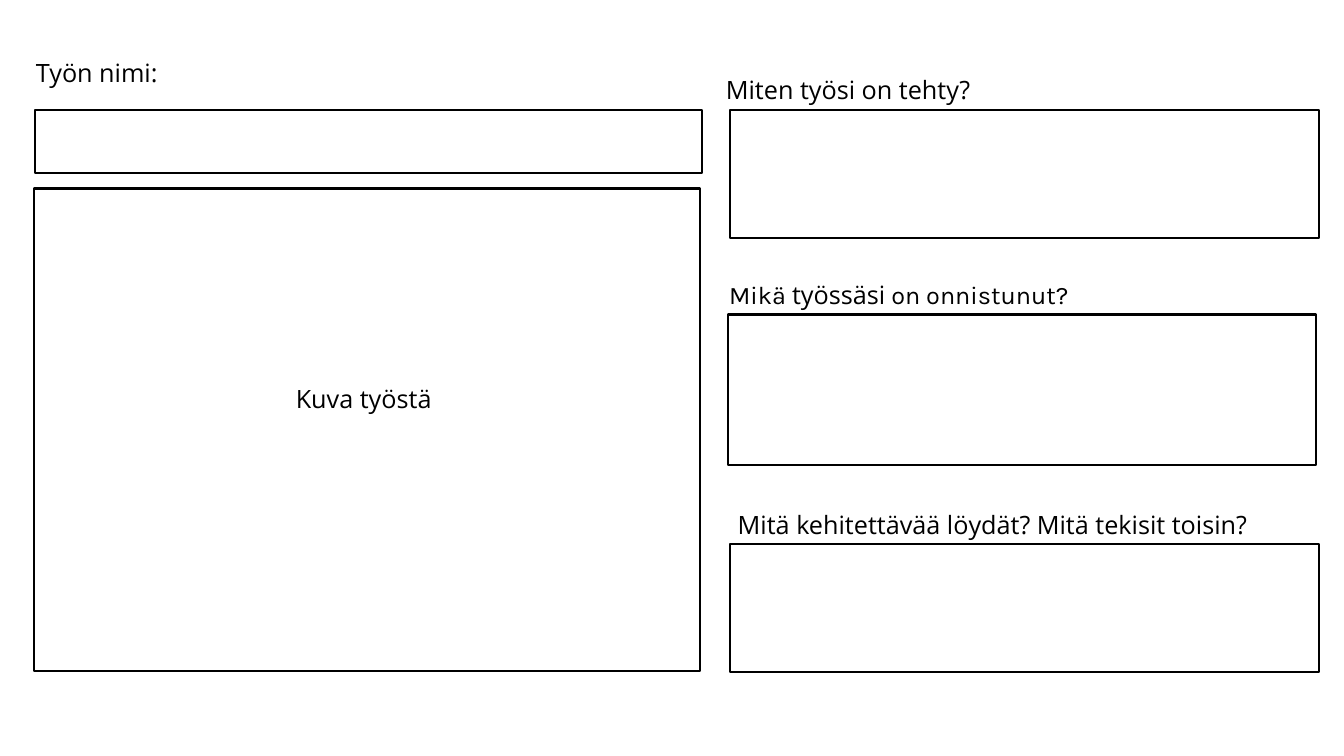
from pptx import Presentation
from pptx.dml.color import RGBColor
from pptx.enum.shapes import MSO_SHAPE as Preset
from pptx.enum.text import MSO_ANCHOR as Anchor, MSO_AUTO_SIZE as AutoSize, PP_ALIGN as Align
from pptx.util import Inches, Pt

BLACK = RGBColor(0x00, 0x00, 0x00)
WHITE = RGBColor(0xFF, 0xFF, 0xFF)
MAIN_FONT = "Open Sans"
ACCENT_FONT = "Karla"
LABEL_HEIGHT = 0.4

ANSWER_FRAMES = [
    (0.34, 1.87, 6.6, 4.79),
    (0.35, 1.09, 6.61, 0.63),
    (7.24, 1.09, 5.84, 1.27),
    (7.22, 3.12, 5.83, 1.49),
    (7.24, 5.4, 5.84, 1.27),
]

LABELS = [
    (2.6, 3.75, 2.08, [("Kuva työstä ", MAIN_FONT)]),
    (6.19, 0.69, 4.51, [("Miten työsi on tehty? ", MAIN_FONT)]),
    (6.66, 2.72, 4.51, [("Mikä ", ACCENT_FONT), ("työssäsi", MAIN_FONT),
                        (" on onnistunut?", ACCENT_FONT)]),
    (6.66, 5, 6.37, [("Mitä kehitettävää löydät? Mitä tekisit toisin?", MAIN_FONT)]),
]


def add_frame(slide, left, top, width, height):
    """Add an empty outlined box for an answer or a photo."""
    frame = slide.shapes.add_shape(
        Preset.RECTANGLE, Inches(left), Inches(top), Inches(width), Inches(height))
    frame.shadow.inherit = False
    frame.fill.solid()
    frame.fill.fore_color.rgb = WHITE
    frame.line.color.rgb = BLACK
    frame.line.width = Pt(1.5)


def write_label(box, spans):
    """Write one centred line of text spans, each in its own font."""
    frame = box.text_frame
    frame.word_wrap = True
    frame.auto_size = AutoSize.SHAPE_TO_FIT_TEXT
    frame.vertical_anchor = Anchor.TOP
    para = frame.paragraphs[0]
    para.alignment = Align.CENTER
    for text, font_name in spans:
        span = para.add_run()
        span.text = text
        span.font.name = font_name
        span.font.size = Pt(18)
        span.font.color.rgb = BLACK


def add_label(slide, left, top, width, spans):
    """Add a text box holding a label."""
    box = slide.shapes.add_textbox(
        Inches(left), Inches(top), Inches(width), Inches(LABEL_HEIGHT))
    write_label(box, spans)


def place_title(slide):
    """Move the title placeholder and write the heading in it."""
    title = slide.shapes.title
    title.left, title.top = Inches(0), Inches(0.52)
    title.width, title.height = Inches(1.92), Inches(LABEL_HEIGHT)
    write_label(title, [("Työn nimi:", MAIN_FONT)])


def main():
    """Build the worksheet slide and save it."""
    deck = Presentation()
    deck.slide_width, deck.slide_height = Inches(13.33), Inches(7.5)
    page = deck.slides.add_slide(deck.slide_layouts.get_by_name("Title Only"))
    place_title(page)
    for frame in ANSWER_FRAMES:
        add_frame(page, *frame)
    for label in LABELS:
        add_label(page, *label)
    deck.save("out.pptx")


if __name__ == "__main__":
    main()
